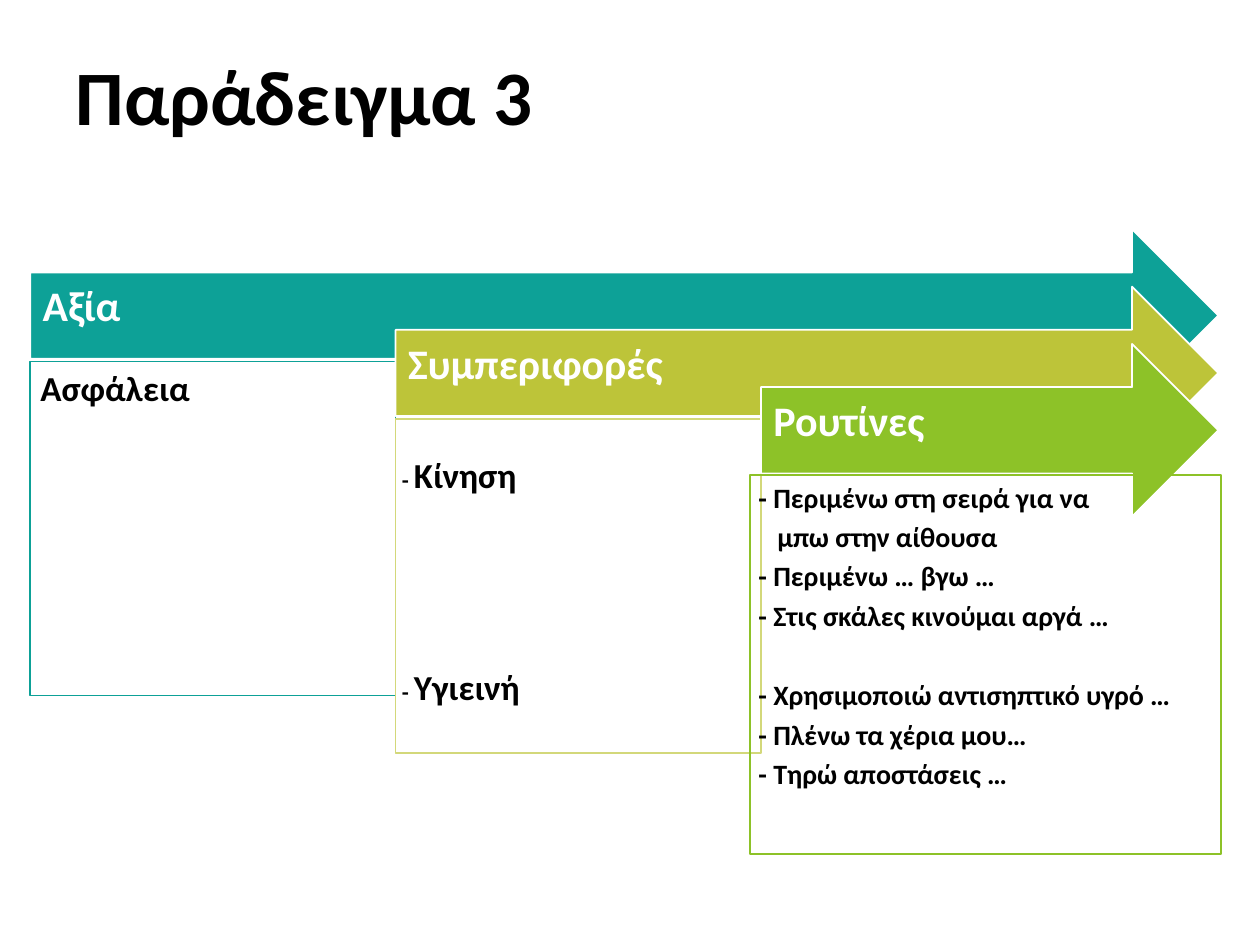
from pptx import Presentation
from pptx.dml.color import RGBColor
from pptx.enum.shapes import MSO_SHAPE as Shape
from pptx.enum.text import MSO_ANCHOR as Anchor, MSO_AUTO_SIZE as AutoSize, PP_ALIGN as Align
from pptx.util import Inches, Pt

# Content
TITLE = "Παράδειγμα 3"
COLORS = {"teal": "0DA197", "olive": "BDC439", "pale olive": "D3D87A",
          "green": "8DC228", "white": "FFFFFF", "black": "000000"}

# A line is: runs of (text, size), space before in points, left indent in inches
STEPS = [
    {"heading": "Αξία", "color": "teal", "outline": "teal", "fill": "white",
     "insets": (0.08,) * 4,
     "lines": [([("Ασφάλεια", 20)], 0, 0)]},
    {"heading": "Συμπεριφορές", "color": "olive", "outline": "pale olive", "fill": "white",
     "insets": (0.05, 0.31, 0.05, 0.05),
     "lines": [([("- ", 13), ("Κίνηση", 20)], 0, 0),
               ([("- ", 13), ("Υγιεινή", 20)], 93, 0)]},
    {"heading": "Ρουτίνες", "color": "green", "outline": "green", "fill": None,
     "insets": (0.07,) * 4, "box": (5.95, 3.77, 3.74, 3.01),
     "lines": [([("- Περιμένω στη σειρά για να", 16)], 0, 0),
               ([("μπω στην αίθουσα", 16)], 0, 0.15),
               ([("- Περιμένω … βγω …", 16)], 0, 0),
               ([("- Στις σκάλες κινούμαι αργά …", 16)], 0, 0),
               ([("- Χρησιμοποιώ αντισηπτικό υγρό …", 16)], 23, 0),
               ([("- Πλένω τα χέρια μου…", 16)], 0, 0),
               ([("- Τηρώ αποστάσεις …", 16)], 0, 0)]},
]

# Staircase: each step moves right and down, and every arrow ends at one edge
LEFT, TOP, RIGHT = 0.24, 1.82, 9.67
STEP_X, STEP_Y = 2.9, 0.455
ARROW_HEIGHT, BOX_DROP, BOX_HEIGHT = 1.37, 1.05, 2.65
ARROW_INSETS = (0.1, 0.1, 0.28, 0.22)
SPACE_AFTER = 0.33  # share of the text size


def rgb(name):
    return RGBColor.from_string(COLORS[name])


def style_run(run, size, color):
    run.font.name = "Calibri"
    run.font.size = Pt(size)
    run.font.bold = True
    run.font.color.rgb = rgb(color)


def add_block(kind, place, fill, outline, lines, color, anchor, insets):
    shape = slide.shapes.add_shape(kind, *map(Inches, place))
    shape.shadow.inherit = False
    if fill:
        shape.fill.solid()
        shape.fill.fore_color.rgb = rgb(fill)
    else:
        shape.fill.background()
    shape.line.color.rgb = rgb(outline)
    shape.line.width = Pt(1)

    frame = shape.text_frame
    frame.word_wrap = True
    frame.vertical_anchor = anchor
    (frame.margin_left, frame.margin_top,
     frame.margin_right, frame.margin_bottom) = map(Inches, insets)
    for index, (runs, space_before, indent) in enumerate(lines):
        paragraph = frame.add_paragraph() if index else frame.paragraphs[0]
        paragraph.alignment = Align.LEFT
        paragraph.line_spacing = 0.9
        paragraph.space_after = Pt(SPACE_AFTER * runs[-1][1])
        if space_before:
            paragraph.space_before = Pt(space_before)
        if indent:
            paragraph._p.get_or_add_pPr().set("marL", str(Inches(indent)))
        for text, size in runs:
            run = paragraph.add_run()
            run.text = text
            style_run(run, size, color)


presentation = Presentation()
presentation.slide_width, presentation.slide_height = Inches(10), Inches(7.5)
slide = presentation.slides.add_slide(presentation.slide_layouts[5])

# Title
title = slide.shapes.title
title.left, title.top, title.width, title.height = map(Inches, (0.5, 0.42, 9, 1.08))
title.text_frame.text = TITLE
title.text_frame.auto_size = AutoSize.NONE
title.text_frame.vertical_anchor = Anchor.TOP
title_paragraph = title.text_frame.paragraphs[0]
title_paragraph.alignment = Align.LEFT
title_paragraph.line_spacing = 0.9
style_run(title_paragraph.runs[0], 44, "black")

# Arrows with their boxes
for number, step in enumerate(STEPS):
    left, top = LEFT + number * STEP_X, TOP + number * STEP_Y
    add_block(Shape.RIGHT_ARROW, (left, top, RIGHT - left, ARROW_HEIGHT),
              step["color"], "white", [([(step["heading"], 24)], 0, 0)],
              "white", Anchor.MIDDLE, ARROW_INSETS)
    box = step.get("box", (left, top + BOX_DROP, STEP_X, BOX_HEIGHT))
    add_block(Shape.RECTANGLE, box, step["fill"], step["outline"], step["lines"],
              "black", Anchor.TOP, step["insets"])

presentation.save("out.pptx")
